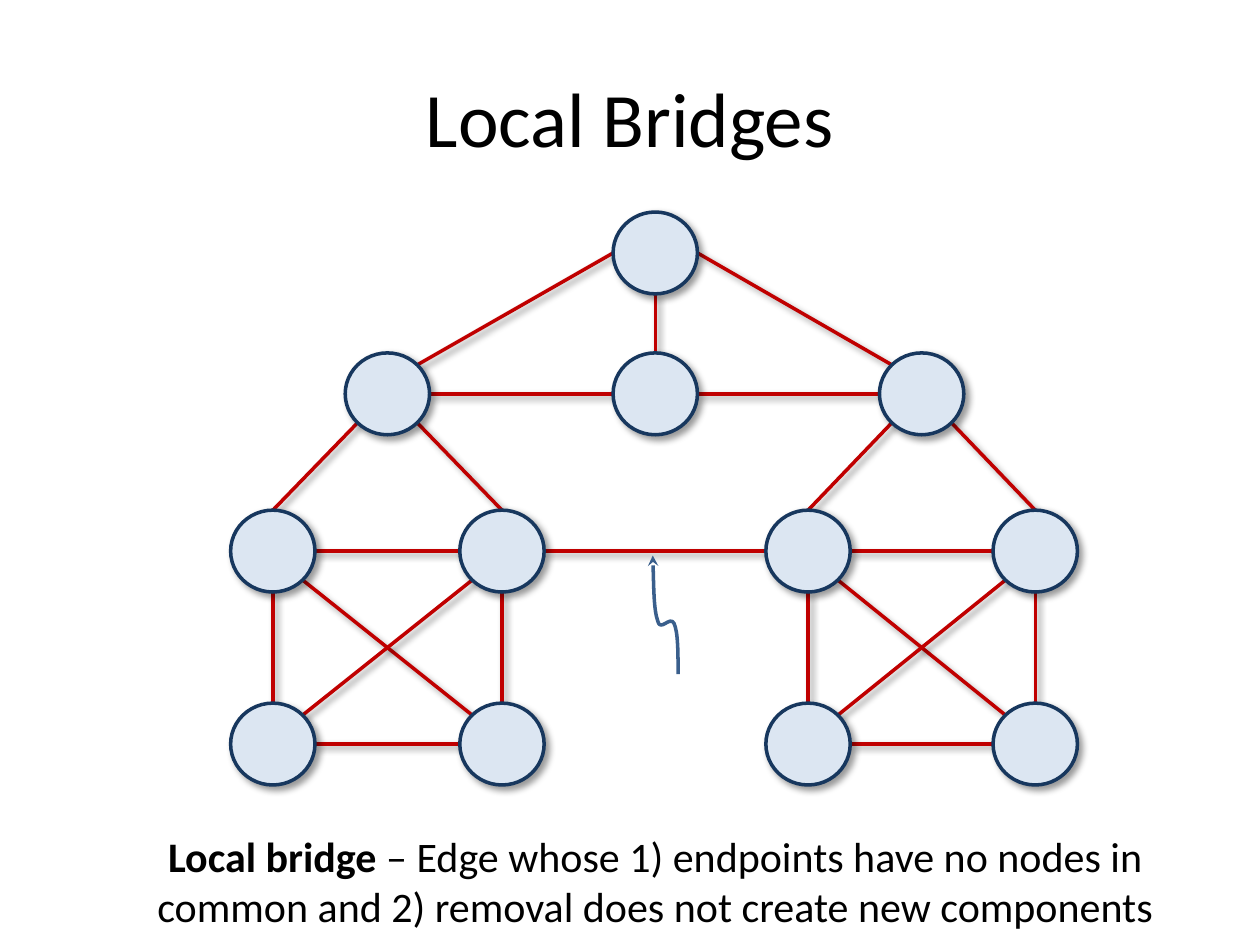
import pptx
import pptx.util
import pptx.oxml
import pptx.oxml.ns
import pptx.dml.color
import pptx.enum.shapes
import pptx.enum.text

Cm, Pt = pptx.util.Cm, pptx.util.Pt
NS = pptx.oxml.ns.nsdecls("a")
SHADE = (
    f'<a:effectLst {NS}><a:outerShdw blurRad="50800" dist="38100" dir="2700000" '
    'algn="tl" rotWithShape="0"><a:srgbClr val="000000"><a:alpha val="40000"/>'
    "</a:srgbClr></a:outerShdw></a:effectLst>"
)


def paint(part, color):
    """Give a font, a solid fill or a line its colour."""
    target = part.color if hasattr(part, "color") else part.fore_color
    target.rgb = pptx.dml.color.RGBColor.from_string(color)


def write(box, text, size):
    """Fill a centred, wrapping text box; text before a dash can be bolded later."""
    frame = box.text_frame
    frame.word_wrap = True
    frame.text = text
    line = frame.paragraphs[0]
    line.alignment = pptx.enum.text.PP_ALIGN.CENTER
    for run in line.runs:
        run.font.name = "Calibri"
        run.font.size = Pt(size)
        paint(run.font, "000000")
    return line


deck = pptx.Presentation()
deck.slide_width, deck.slide_height = Cm(25.4), Cm(19.05)
slide = deck.slides.add_slide(deck.slide_layouts[6])
shapes = slide.shapes

# Title
title = shapes.add_textbox(Cm(1.27), Cm(0.76), Cm(22.86), Cm(3.18))
write(title, "Local Bridges", 44)
title.text_frame.vertical_anchor = pptx.enum.text.MSO_ANCHOR.MIDDLE

# Node centres: a crown of four above two squares of four
WIDE, HIGH = 1.7, 1.65
nodes = {
    "top": (13.21, 5.1),
    "mid": (13.21, 7.94),
    "left": (7.81, 7.94),
    "right": (18.58, 7.94),
}
for side, pair in (("left", (5.5, 10.12)), ("right", (16.29, 20.87))):
    for row, y in (("upper", 11.11), ("lower", 15)):
        for col, x in zip("WE", pair):
            nodes[side, row, col] = (x, y)

# Points on a node's rim, as shares of its half width and half height
D = 0.71
rim = {
    "N": (0, -1), "S": (0, 1), "W": (-1, 0), "E": (1, 0),
    "NW": (-D, -D), "NE": (D, -D), "SW": (-D, D), "SE": (D, D),
}

# Edges: node, rim point, node, rim point
edges = [
    ("top", "W", "left", "NE"),
    ("top", "E", "right", "NW"),
    ("top", "S", "mid", "N"),
    ("left", "E", "mid", "W"),
    ("mid", "E", "right", "W"),
    (("left", "upper", "E"), "E", ("right", "upper", "W"), "W"),
]
for side in ("left", "right"):
    for col, other in ("WE", "EW"):
        upper, lower = (side, "upper", col), (side, "lower", col)
        edges += [
            (side, "S" + col, upper, "N"),
            (upper, "S", lower, "N"),
            (upper, "S" + other, (side, "lower", other), "N" + col),
        ]
    for row in ("upper", "lower"):
        edges.append(((side, row, "W"), "E", (side, row, "E"), "W"))

for start, out, stop, into in edges:
    ends = []
    for node, spot in ((start, out), (stop, into)):
        (x, y), (dx, dy) = nodes[node], rim[spot]
        ends += [Cm(x + dx * WIDE / 2), Cm(y + dy * HIGH / 2)]
    edge = shapes.add_connector(pptx.enum.shapes.MSO_CONNECTOR.STRAIGHT, *ends)
    edge.line.width = Pt(2)
    paint(edge.line, "C00000")
    edge._element.spPr.append(pptx.oxml.parse_xml(SHADE))

# Nodes
for x, y in nodes.values():
    node = shapes.add_shape(
        pptx.enum.shapes.MSO_SHAPE.OVAL,
        Cm(x - WIDE / 2), Cm(y - HIGH / 2), Cm(WIDE), Cm(HIGH),
    )
    node.fill.solid()
    paint(node.fill, "DCE6F2")
    node.line.width = Pt(2)
    paint(node.line, "17375E")
    node._element.spPr.append(pptx.oxml.parse_xml(SHADE))

# Wavy arrow: a start, then three points for each curve
wave = [
    (13.67, 13.59),
    (13.67, 13.16), (13.67, 12.75), (13.59, 12.57),
    (13.51, 12.4), (13.31, 12.75), (13.26, 12.52),
    (13.18, 12.29), (13.18, 11.76), (13.16, 11.2),
]
points = [(Cm(x), Cm(y)) for x, y in wave]
pen = shapes.build_freeform(*points[0])
pen.add_line_segments(points[1:], close=False)
arrow = pen.convert_to_shape()
arrow.shadow.inherit = False
arrow.fill.background()
arrow.line.width = Pt(2)
paint(arrow.line, "3A5F8C")
arrow.line._ln.append(pptx.oxml.parse_xml(f'<a:tailEnd {NS} type="stealth"/>'))

# Turn each three straight steps into one Bezier curve
steps = arrow._element.xpath(".//a:lnTo")
for i in range(0, len(steps), 3):
    curve = pptx.oxml.parse_xml(f"<a:cubicBezTo {NS}/>")
    steps[i].addprevious(curve)
    for step in steps[i:i + 3]:
        curve.append(step[0])
        step.getparent().remove(step)

# Definition
note = shapes.add_textbox(Cm(1.88), Cm(16.61), Cm(22.66), Cm(2.31))
line = write(note, "Local bridge", 24)
line.runs[0].font.bold = True
rest = line.add_run()
rest.text = (
    " – Edge whose 1) endpoints have no nodes in common"
    " and 2) removal does not create new components"
)
rest.font.name = "Calibri"
rest.font.size = Pt(24)
paint(rest.font, "000000")

deck.save("out.pptx")
